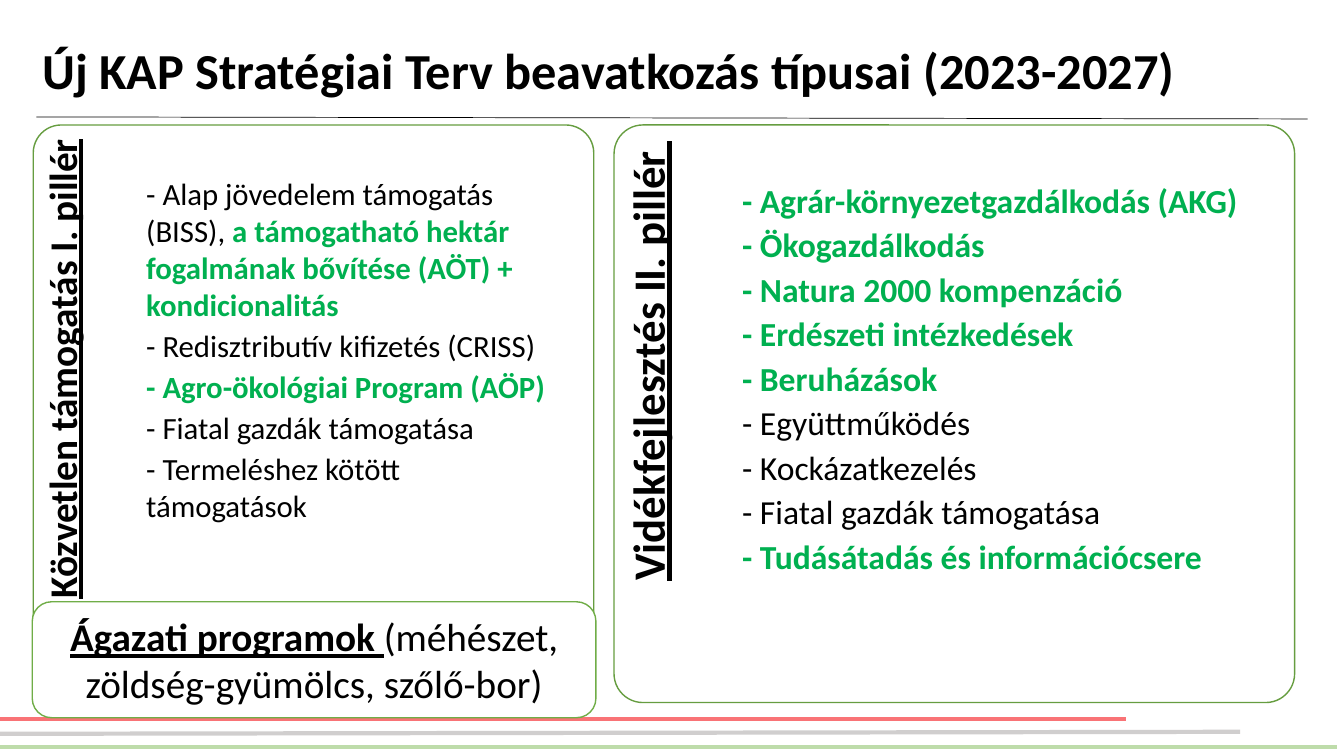
from lxml import etree
from pptx import Presentation
from pptx.dml.color import RGBColor
from pptx.enum import shapes, text
from pptx.oxml.ns import qn
from pptx.util import Inches, Pt

COLORS = {
    "black": "000000", "white": "FFFFFF", "green": "00B050", "frame": "669D40",
    "sector": "70AD47", "red": "F97376", "pale": "BEDCAA", "grey": "D0CECE",
}
FONT = "Calibri"

presentation = Presentation()
presentation.slide_width, presentation.slide_height = Inches(13.33), Inches(7.5)
slide = presentation.slides.add_slide(presentation.slide_layouts[6])


def add_text_box(left, top, width, height, insets):
    """Add a wrapping text box; insets run left, top, right, bottom."""
    box = slide.shapes.add_textbox(
        Inches(left), Inches(top), Inches(width), Inches(height))
    frame = box.text_frame
    frame.word_wrap = True
    frame.margin_left, frame.margin_top, frame.margin_right, frame.margin_bottom = (
        Inches(inset) for inset in insets)
    return box


def add_frame(left, top, width, height, color):
    """Add a white rounded rectangle with a thin outline."""
    shape = slide.shapes.add_shape(
        shapes.MSO_SHAPE.ROUNDED_RECTANGLE,
        Inches(left), Inches(top), Inches(width), Inches(height))
    shape.shadow.inherit = False
    shape.fill.solid()
    shape.fill.fore_color.rgb = RGBColor.from_string(COLORS["white"])
    shape.line.color.rgb = RGBColor.from_string(COLORS[color])
    shape.line.width = Pt(1)
    return shape


# Footer stripes and the rule below the title
rules = [
    (0, 7.13, 11.17, 7.13, "red", 3),
    (0, 7.41, 13.26, 7.41, "pale", 3),
    (0, 7.28, 12.3, 7.26, "grey", 3),
    (0.36, 1.16, 12.97, 1.18, "black", 0.5),
]
for x1, y1, x2, y2, color, weight in rules:
    rule = slide.shapes.add_connector(
        shapes.MSO_CONNECTOR.STRAIGHT, Inches(x1), Inches(y1), Inches(x2), Inches(y2))
    rule.line.color.rgb = RGBColor.from_string(COLORS[color])
    rule.line.width = Pt(weight)
    etree.SubElement(rule._element.spPr, qn("a:effectLst"))

# Title
title = add_text_box(0.32, 0, 12.76, 1.46, (0.1, 0.05, 0.1, 0.05))
title.text_frame.vertical_anchor = text.MSO_ANCHOR.MIDDLE
paragraph = title.text_frame.paragraphs[0]
paragraph.text = "Új KAP Stratégiai Terv beavatkozás típusai (2023-2027)"
paragraph.line_spacing = 0.9
paragraph.font.name, paragraph.font.size, paragraph.font.bold = FONT, Pt(36), True
paragraph.font.color.rgb = RGBColor.from_string(COLORS["black"])

# The two pillars; each item is a list of (text, highlighted) runs
PILLAR_TOP, PILLAR_HEIGHT, HEADING_LENGTH = 1.24, 5.73, 4.8
pillars = [
    {
        "left": 0.33, "width": 5.56,
        "heading": "Közvetlen támogatás I. pillér", "heading_size": 28,
        "heading_depth": 1.11, "heading_insets": (0, 0.1, 0.14, 0),
        "list_left": 1.45, "list_width": 4.15, "list_inset": 0.49, "list_size": 22,
        "items": [
            [("- Alap jövedelem támogatás (BISS), ", False),
             ("a támogatható hektár fogalmának bővítése (AÖT) + kondicionalitás", True)],
            [("- Redisztributív kifizetés (CRISS)", False)],
            [("- Agro-ökológiai Program (AÖP)", True)],
            [("- Fiatal gazdák támogatása", False)],
            [("- Termeléshez kötött támogatások", False)],
        ],
    },
    {
        "left": 6.09, "width": 6.75,
        "heading": "Vidékfejlesztés II. pillér ", "heading_size": 32,
        "heading_depth": 1.35, "heading_insets": (0, 0.12, 0.16, 0),
        "list_left": 7.36, "list_width": 5.03, "list_inset": 0.54, "list_size": 24,
        "items": [
            [("- Agrár-környezetgazdálkodás (AKG)", True)],
            [("- Ökogazdálkodás", True)],
            [("- Natura 2000 kompenzáció", True)],
            [("- Erdészeti intézkedések", True)],
            [("- Beruházások", True)],
            [("- Együttműködés", False)],
            [("- Kockázatkezelés", False)],
            [("- Fiatal gazdák támogatása", False)],
            [("- Tudásátadás és információcsere", True)],
        ],
    },
]
for pillar in pillars:
    panel = add_frame(pillar["left"], PILLAR_TOP, pillar["width"], PILLAR_HEIGHT, "frame")
    panel.adjustments[0] = 0.05

    # Turned about its centre, the heading starts at the panel's top left corner
    depth = pillar["heading_depth"]
    offset = (HEADING_LENGTH - depth) / 2
    heading = add_text_box(pillar["left"] - offset, PILLAR_TOP + offset,
                           HEADING_LENGTH, depth, pillar["heading_insets"])
    heading.rotation = 270
    paragraph = heading.text_frame.paragraphs[0]
    paragraph.text = pillar["heading"]
    paragraph.alignment = text.PP_ALIGN.RIGHT
    paragraph.line_spacing = 0.9
    paragraph.font.name, paragraph.font.size = FONT, Pt(pillar["heading_size"])
    paragraph.font.bold = paragraph.font.underline = True
    paragraph.font.color.rgb = RGBColor.from_string(COLORS["black"])

    measures = add_text_box(pillar["list_left"], PILLAR_TOP, pillar["list_width"],
                            PILLAR_HEIGHT, (0, pillar["list_inset"], 0, 0))
    for index, item in enumerate(pillar["items"]):
        frame = measures.text_frame
        paragraph = frame.add_paragraph() if index else frame.paragraphs[0]
        paragraph.space_after = Pt(3)
        paragraph.font.name, paragraph.font.size = FONT, Pt(pillar["list_size"])
        for words, highlighted in item:
            run = paragraph.add_run()
            run.text = words
            run.font.bold = highlighted
            run.font.color.rgb = RGBColor.from_string(
                COLORS["green" if highlighted else "black"])

# Sector programmes
sector = add_frame(0.32, 5.97, 5.59, 1.15, "sector")
sector.text_frame.word_wrap = True
sector.text_frame.vertical_anchor = text.MSO_ANCHOR.MIDDLE
paragraph = sector.text_frame.paragraphs[0]
paragraph.alignment = text.PP_ALIGN.CENTER
paragraph.font.name, paragraph.font.size = FONT, Pt(28)
for words, emphasis in [("Ágazati programok ", True),
                        ("(méhészet, zöldség-gyümölcs, szőlő-bor)", False)]:
    run = paragraph.add_run()
    run.text = words
    run.font.bold = run.font.underline = emphasis
    run.font.color.rgb = RGBColor.from_string(COLORS["black"])

presentation.save("out.pptx")
